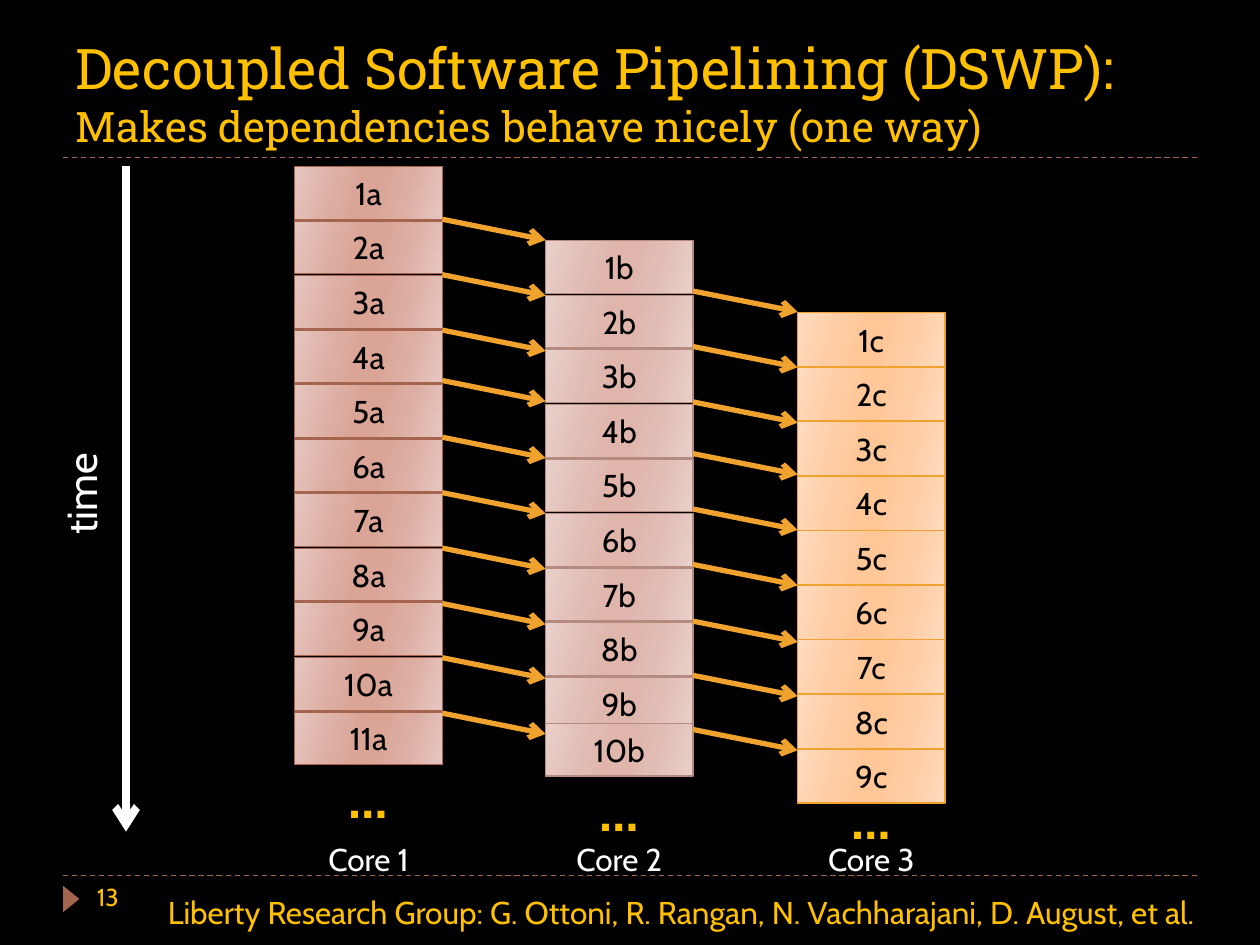
from copy import deepcopy

from lxml.etree import SubElement
from pptx import Presentation
from pptx.dml.color import RGBColor
from pptx.enum.dml import MSO_LINE
from pptx.enum.shapes import MSO_CONNECTOR, MSO_SHAPE
from pptx.enum.text import MSO_ANCHOR, MSO_AUTO_SIZE, PP_ALIGN
from pptx.oxml.ns import qn
from pptx.util import Inches, Pt

# Content
TITLE = "Decoupled Software Pipelining (DSWP):"
SUBTITLE = "Makes dependencies behave nicely (one way)"
CREDIT = "Liberty Research Group: G. Ottoni, R. Rangan, N. Vachharajani, D. August, et al."
PAGE_NUMBER = "13"

COLORS = {
    "background": "000000", "gold": "FFC000", "white": "FFFFFF",
    "black": "000000", "rust": "A5644E", "arrow": "F0A22E",
}
STOP_POSITIONS = [0, 0.30, 0.45, 0.55, 0.73, 1]

# "shades" run from the outer edge of the gradient to its middle;
# "sends" are the heights at which a core passes its result on
CORES = [
    {"name": "Core 1", "letter": "a", "count": 11, "left": 2.34, "top": 1.32,
     "height": 0.42, "dots_top": 6.0, "line": "A5644E",
     "shades": ["E6C6C0", "DDADA2", "DAA497"],
     "sends": [1.74, 2.18, 2.62, 3.02, 3.47, 3.91, 4.35, 4.79, 5.22, 5.66]},
    {"name": "Core 2", "letter": "b", "count": 10, "left": 4.33, "top": 1.91,
     "height": 0.42, "dots_top": 6.11, "line": "B58B80",
     "shades": ["E9D0CB", "E1BCB4", "DFB5AC"],
     "sends": [2.31, 2.75, 3.19, 3.6, 4.04, 4.48, 4.93, 5.36, 5.79]},
    {"name": "Core 3", "letter": "c", "count": 9, "left": 6.33, "top": 2.48,
     "height": 0.43, "dots_top": 6.17, "line": "F0A22E",
     "shades": ["FFDBBF", "FFCCA3", "FFC798"], "sends": []},
]
SPECIAL_TOPS = {"10b": 5.74}  # this stage starts early, over the one before
STAGE_WIDTH = 1.17
STAGE_STEP = 0.433
SEND_DROP = 0.165


def color(name):
    return RGBColor.from_string(COLORS.get(name, name))


def place(shape, left, top, width, height):
    shape.left, shape.top = Inches(left), Inches(top)
    shape.width, shape.height = Inches(width), Inches(height)


def style(paragraph, size, ink, font="Cabin", align=PP_ALIGN.LEFT, bold=False):
    paragraph.alignment = align
    paragraph.font.name = font
    paragraph.font.size = Pt(size)
    paragraph.font.bold = bold
    paragraph.font.color.rgb = color(ink)


def add_text(page, text, bounds, size, ink, align=PP_ALIGN.LEFT, bold=False):
    box = page.shapes.add_textbox(*map(Inches, bounds))
    box.text_frame.word_wrap = True
    paragraph = box.text_frame.paragraphs[0]
    paragraph.text = text
    style(paragraph, size, ink, align=align, bold=bold)
    return box


def add_line(page, start, end, ink, width, dashed=False, arrow=False):
    line = page.shapes.add_connector(
        MSO_CONNECTOR.STRAIGHT, *map(Inches, (*start, *end)))
    line.line.color.rgb = color(ink)
    line.line.width = Pt(width)
    if dashed:
        line.line.dash_style = MSO_LINE.DASH
    if arrow:
        SubElement(line.line._get_or_add_ln(), qn("a:tailEnd"), type="arrow")
    SubElement(line._element.spPr, qn("a:effectLst"))


def fill_gradient(shape, shades):
    shape.fill.gradient()
    shape.fill.gradient_angle = 344
    stop_list = shape._element.spPr.find(qn("a:gradFill")).find(qn("a:gsLst"))
    while len(stop_list) < len(STOP_POSITIONS):
        stop_list.append(deepcopy(stop_list[0]))
    mirrored = shades + shades[::-1]
    for stop, position, shade in zip(
            shape.fill.gradient_stops, STOP_POSITIONS, mirrored):
        stop.position = position
        stop.color.rgb = color(shade)


def add_stage(page, core, number):
    label = f"{number}{core['letter']}"
    top = SPECIAL_TOPS.get(label, core["top"] + (number - 1) * STAGE_STEP)
    stage = page.shapes.add_shape(
        MSO_SHAPE.RECTANGLE,
        *map(Inches, (core["left"], top, STAGE_WIDTH, core["height"])))
    stage.shadow.inherit = False
    fill_gradient(stage, core["shades"])
    stage.line.color.rgb = color(core["line"])
    stage.line.width = Pt(0.75)
    stage.text_frame.vertical_anchor = MSO_ANCHOR.MIDDLE
    paragraph = stage.text_frame.paragraphs[0]
    paragraph.text = label
    style(paragraph, 18, "black", align=PP_ALIGN.CENTER)


def main():
    deck = Presentation()
    deck.slide_width, deck.slide_height = Inches(10), Inches(7.5)
    page = deck.slides.add_slide(deck.slide_layouts[1])
    page.background.fill.solid()
    page.background.fill.fore_color.rgb = color("background")

    # Rules and page marker
    for height in (6.95, 1.25):
        add_line(page, (0.5, height), (9.5, height), "rust", 0.75, dashed=True)
    marker = page.shapes.add_shape(
        MSO_SHAPE.ISOSCELES_TRIANGLE, *map(Inches, (0.46, 7.07, 0.21, 0.13)))
    marker.rotation = 90
    marker.shadow.inherit = False
    marker.fill.solid()
    marker.fill.fore_color.rgb = color("rust")
    marker.line.fill.background()
    add_text(page, PAGE_NUMBER, (0.67, 6.95, 2.17, 0.4), 14, "gold")

    # Title
    title = page.shapes.title
    place(title, 0.5, 0.17, 9, 1.08)
    title.text_frame.auto_size = MSO_AUTO_SIZE.NONE
    title.text_frame.vertical_anchor = MSO_ANCHOR.BOTTOM
    heading = title.text_frame.paragraphs[0]
    style(heading, 32, "gold", font="Roboto Slab")
    heading.add_run().text = TITLE
    heading.add_line_break()
    span = heading.add_run()
    span.text = SUBTITLE
    span.font.size = Pt(24)

    # Time axis
    add_line(page, (1, 1.32), (1, 6.6), "white", 4.5, arrow=True)
    time_box = add_text(page, "time", (0.39, 3.59, 0.61, 0.75), 24, "white")
    time_box.text_frame.word_wrap = False
    time_box.text_frame._txBody.bodyPr.set("vert", "vert270")

    # Stages of each core
    for core in CORES:
        for number in range(1, core["count"] + 1):
            add_stage(page, core, number)
        left = core["left"]
        add_text(page, "…", (left, core["dots_top"], STAGE_WIDTH, 0.64),
                 32, "gold", PP_ALIGN.CENTER, bold=True)
        add_text(page, core["name"], (left, 6.62, STAGE_WIDTH, 0.4),
                 18, "white", PP_ALIGN.CENTER)

    # Results passed to the next core
    for sender, receiver in zip(CORES, CORES[1:]):
        for height in sender["sends"]:
            add_line(page, (sender["left"] + STAGE_WIDTH, height),
                     (receiver["left"], height + SEND_DROP),
                     "arrow", 3, arrow=True)

    # Credit
    body = page.placeholders[1]
    place(body, 1.17, 7.04, 8.41, 0.54)
    body.text_frame.auto_size = MSO_AUTO_SIZE.NONE
    credit = body.text_frame.paragraphs[0]
    credit.text = CREDIT
    properties = credit._p.get_or_add_pPr()
    properties.set("marL", "0")
    properties.set("indent", "0")
    SubElement(properties, qn("a:buNone"))
    credit.space_before = Pt(0)
    style(credit, 18, "gold", align=PP_ALIGN.RIGHT)

    deck.save("out.pptx")


if __name__ == "__main__":
    main()
